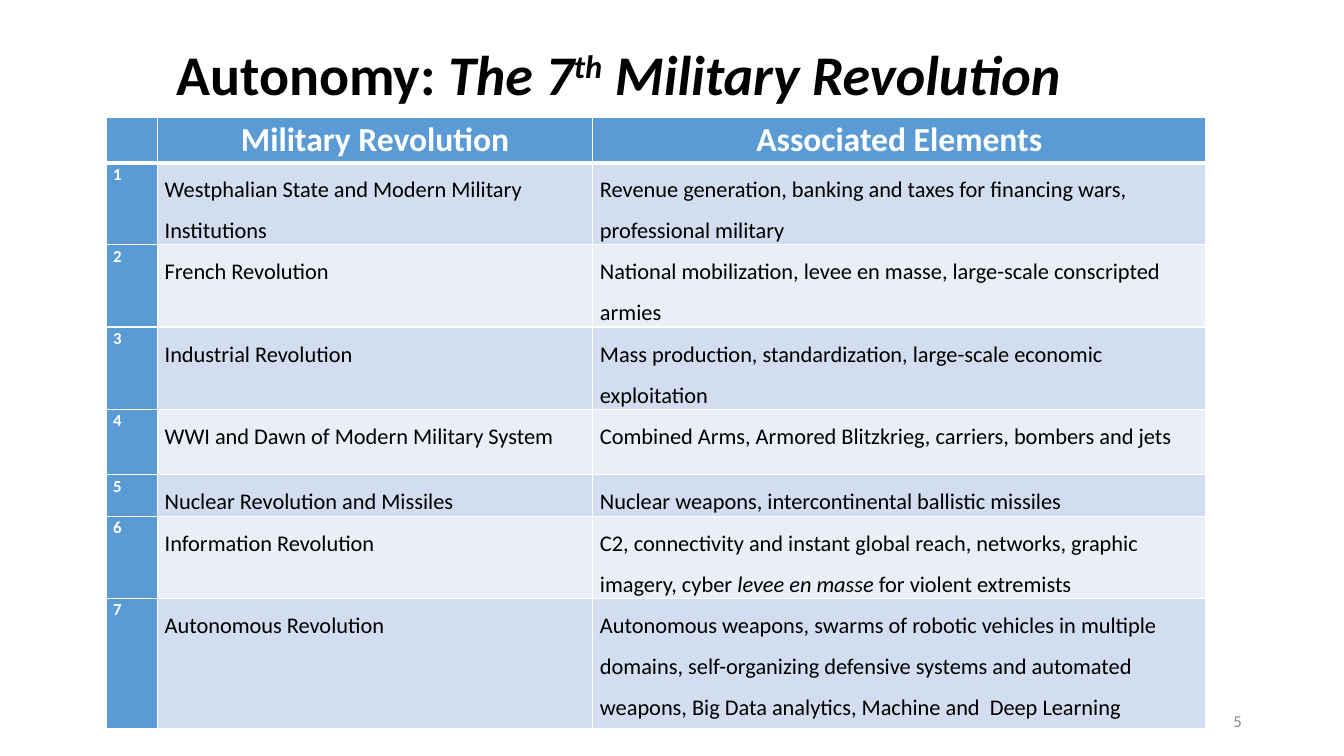
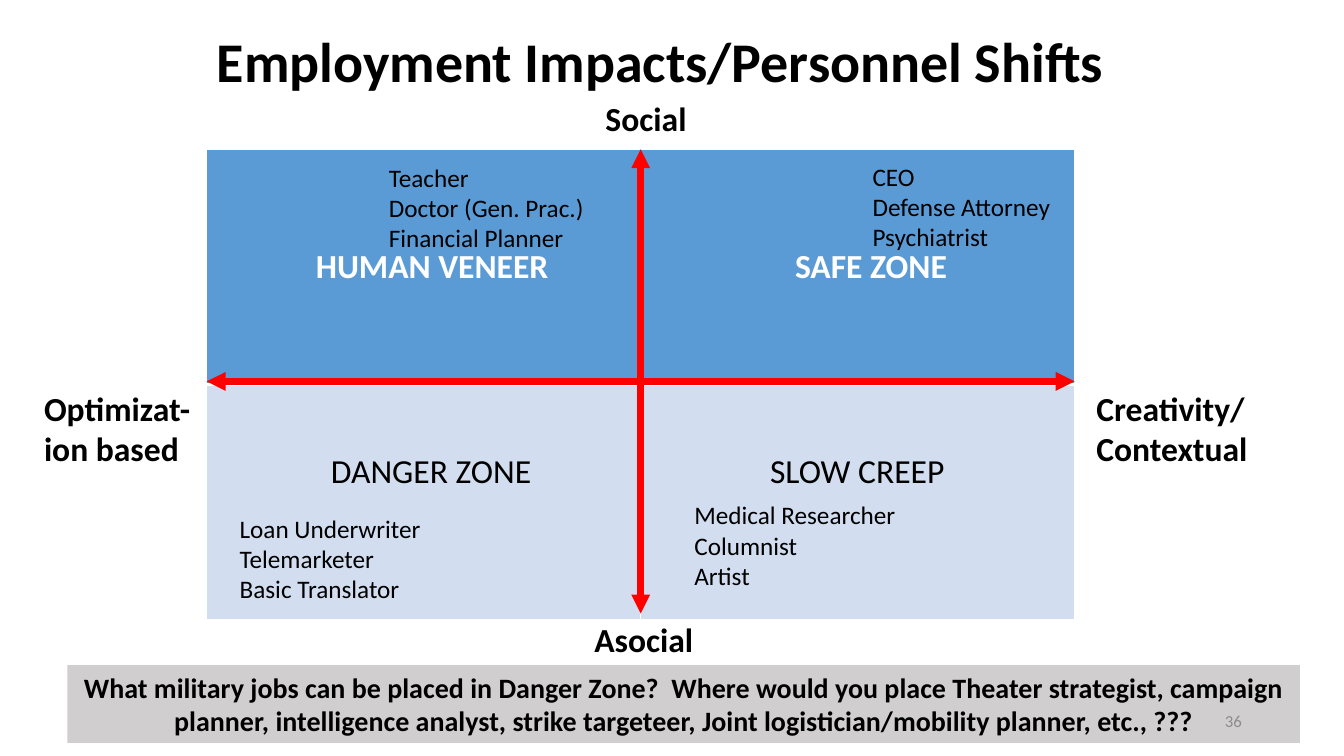
"""Build two slides: the seven military revolutions and a matrix of employment impacts."""
from lxml.etree import SubElement
from pptx import Presentation
from pptx.dml.color import RGBColor
from pptx.enum.shapes import MSO_CONNECTOR, MSO_SHAPE
from pptx.enum.text import MSO_ANCHOR, MSO_AUTO_SIZE, PP_ALIGN
from pptx.oxml.ns import qn
from pptx.util import Cm, Pt

COLORS = {
    "black": "000000",
    "white": "FFFFFF",
    "header": "5B9BD5",
    "band": "D2DEEF",
    "light_band": "EAEFF7",
    "arrow": "FF0000",
    "banner": "D0CECE",
    "page_number": "8C8C8C",
}
FONT = "Calibri"


def format_text(frame, size, color="black", bold=False, align=PP_ALIGN.LEFT, spacing=1.0):
    """Give every paragraph and run of a text frame the same look."""
    frame.word_wrap = True
    for paragraph in frame.paragraphs:
        paragraph.alignment = align
        paragraph.line_spacing = spacing
        for run in paragraph.runs:
            run.font.name = FONT
            run.font.size = Pt(size)
            run.font.bold = bold
            run.font.color.rgb = RGBColor.from_string(COLORS[color])


def style_cell(cell, fill, bottom_width=1):
    """Give a table cell white borders and a solid fill."""
    properties = cell._tc.get_or_add_tcPr()
    for side, width in (("L", 1), ("R", 1), ("T", 1), ("B", bottom_width)):
        border = SubElement(properties, qn(f"a:ln{side}"), w=str(Pt(width)))
        border_fill = SubElement(border, qn("a:solidFill"))
        SubElement(border_fill, qn("a:srgbClr"), val=COLORS["white"])
    cell.fill.solid()
    cell.fill.fore_color.rgb = RGBColor.from_string(COLORS[fill])


prs = Presentation()
prs.slide_width, prs.slide_height = Cm(33.87), Cm(19.05)
title_only = prs.slide_layouts[5]

revolutions_slide = prs.slides.add_slide(title_only)
heading = revolutions_slide.shapes.title.text_frame.paragraphs[0]
heading.text = "Autonomy: "
for words, baseline in (("The 7", 0), ("th", 30000), (" Military Revolution", 0)):
    run = heading.add_run()
    run.text = words
    run.font.italic = True
    run._r.get_or_add_rPr().set("baseline", str(baseline))

REVOLUTIONS = [
    ("Westphalian State and Modern Military Institutions",
     ["Revenue generation, banking and taxes for financing wars, professional military"], 2.07),
    ("French Revolution",
     ["National mobilization, levee en masse, large-scale conscripted armies"], 2.07),
    ("Industrial Revolution",
     ["Mass production, standardization, large-scale economic exploitation"], 2.07),
    ("WWI and Dawn of Modern Military System",
     ["Combined Arms, Armored Blitzkrieg, carriers, bombers and jets"], 1.65),
    ("Nuclear Revolution and Missiles",
     ["Nuclear weapons, intercontinental ballistic missiles"], 1.05),
    ("Information Revolution",
     ["C2, connectivity and instant global reach, networks, graphic imagery, cyber ",
      "levee en masse", " for violent extremists"], 2.07),
    ("Autonomous Revolution",
     ["Autonomous weapons, swarms of robotic vehicles in multiple domains, self-organizing "
      "defensive systems and automated weapons, Big Data analytics, Machine and  Deep Learning"],
     3.27),
]
revolutions = revolutions_slide.shapes.add_table(
    len(REVOLUTIONS) + 1, 3, Cm(2.67), Cm(2.95), Cm(27.53), Cm(15.4)).table
for column, width in zip(revolutions.columns, (1.3, 10.97, 15.45)):
    column.width = Cm(width)
revolutions.rows[0].height = Cm(1.15)

for cell, label in zip(revolutions.rows[0].cells, ("", "Military Revolution", "Associated Elements")):
    cell.text_frame.text = label
    format_text(cell.text_frame, 24, "white", True, PP_ALIGN.CENTER, 1.07)
    style_cell(cell, "header", 3)

for number, (revolution, elements, height) in enumerate(REVOLUTIONS, 1):
    revolutions.rows[number].height = Cm(height)
    band = "band" if number % 2 else "light_band"
    for column, parts in enumerate(([str(number)], [revolution], elements)):
        cell = revolutions.cell(number, column)
        paragraph = cell.text_frame.paragraphs[0]
        for position, part in enumerate(parts):
            run = paragraph.add_run()
            run.text = part
            run.font.italic = position == 1
        if column == 0:
            format_text(cell.text_frame, 12, "white", True, spacing=1.07)
        else:
            format_text(cell.text_frame, 16, spacing=1.5)
        paragraph.space_after = Pt(6)
        style_cell(cell, "header" if column == 0 else band)

for row in revolutions.rows:
    for cell in row.cells:
        cell.margin_left = cell.margin_right = Cm(0.18)
        cell.margin_top = cell.margin_bottom = 0

impacts_slide = prs.slides.add_slide(title_only)
impacts_slide.shapes.title.text_frame.text = "Employment Impacts/Personnel Shifts"

LEFT, TOP, WIDTH, HEIGHT = 5.21, 3.76, 21.87, 11.7
zones = impacts_slide.shapes.add_table(2, 2, Cm(LEFT), Cm(TOP), Cm(WIDTH), Cm(HEIGHT)).table
ZONES = [
    (0, 0, "HUMAN VENEER", 2.75),
    (0, 1, "SAFE ZONE", 3.89),
    (1, 0, "DANGER ZONE", 3.13),
    (1, 1, "SLOW CREEP", 3.26),
]
for row in zones.rows:
    row.height = Cm(5.93)
for row, column, zone, indent in ZONES:
    cell = zones.cell(row, column)
    cell.text_frame.text = zone
    cell.margin_left = Cm(indent)
    cell.margin_top = Cm(1.68 if row else 2.45)
    format_text(cell.text_frame, 24, "black" if row else "white", row == 0)
    style_cell(cell, "band" if row else "header", 1 if row else 3)

middle_x, middle_y = LEFT + WIDTH / 2, TOP + HEIGHT / 2
AXES = [
    (middle_x, TOP + HEIGHT, middle_x, TOP),
    (LEFT + WIDTH, middle_y, LEFT, middle_y),
]
for ends in AXES:
    axis = impacts_slide.shapes.add_connector(MSO_CONNECTOR.STRAIGHT, *map(Cm, ends))
    axis.line.color.rgb = RGBColor.from_string(COLORS["arrow"])
    axis.line.width = Pt(4.5)
    outline = axis.line._get_or_add_ln()
    for end in ("a:headEnd", "a:tailEnd"):
        SubElement(outline, qn(end), type="triangle")
    SubElement(axis._element.spPr, qn("a:effectLst"))

LABELS = [
    ("Social", 15.01, 2.34, 2.8, 1.27, 24),
    ("Asocial", 14.73, 15.47, 3.4, 1.27, 24),
    ("Optimizat-ion based", 0.86, 9.65, 4.37, 2.31, 24),
    ("Creativity/Contextual", 27.38, 9.65, 4.55, 2.31, 24),
    ("CEO\nDefense Attorney\nPsychiatrist", 21.74, 3.94, 5.18, 2.57, 18),
    ("Loan Underwriter\nTelemarketer\nBasic Translator", 5.79, 12.8, 7.52, 2.57, 18),
    ("Teacher\nDoctor (Gen. Prac.)\nFinancial Planner", 9.55, 3.96, 7.92, 2.57, 18),
    ("Medical Researcher\nColumnist\nArtist", 17.25, 12.47, 10.21, 2.57, 18),
]
for words, left, top, width, height, size in LABELS:
    label = impacts_slide.shapes.add_textbox(Cm(left), Cm(top), Cm(width), Cm(height)).text_frame
    label.text = words
    format_text(label, size, bold=size == 24)

question = impacts_slide.shapes.add_shape(
    MSO_SHAPE.RECTANGLE, Cm(1.7), Cm(16.76), Cm(31.06), Cm(1.96))
question.shadow.inherit = False
question.fill.solid()
question.fill.fore_color.rgb = RGBColor.from_string(COLORS["banner"])
question.line.fill.background()
question.text_frame.text = (
    "What military jobs can be placed in Danger Zone?  Where would you place Theater strategist, "
    "campaign planner, intelligence analyst, strike targeteer, Joint logistician/mobility planner, "
    "etc., ???")
format_text(question.text_frame, 20, bold=True, align=PP_ALIGN.CENTER)

FRAMES = [
    (revolutions_slide, "5", (4.19, 0.97, 25.3, 1.96)),
    (impacts_slide, "36", (5.21, -0.23, 28.6, 3.68)),
]
for slide, page, bounds in FRAMES:
    title = slide.shapes.title
    title.left, title.top, title.width, title.height = map(Cm, bounds)
    title.text_frame.auto_size = MSO_AUTO_SIZE.NONE
    title.text_frame.vertical_anchor = MSO_ANCHOR.MIDDLE
    format_text(title.text_frame, 40, bold=True, spacing=0.9)
    page_number = slide.shapes.add_textbox(Cm(23.93), Cm(17.65), Cm(7.62), Cm(1.02)).text_frame
    page_number.text = page
    page_number.vertical_anchor = MSO_ANCHOR.MIDDLE
    format_text(page_number, 12, "page_number", align=PP_ALIGN.RIGHT)

prs.save("out.pptx")
